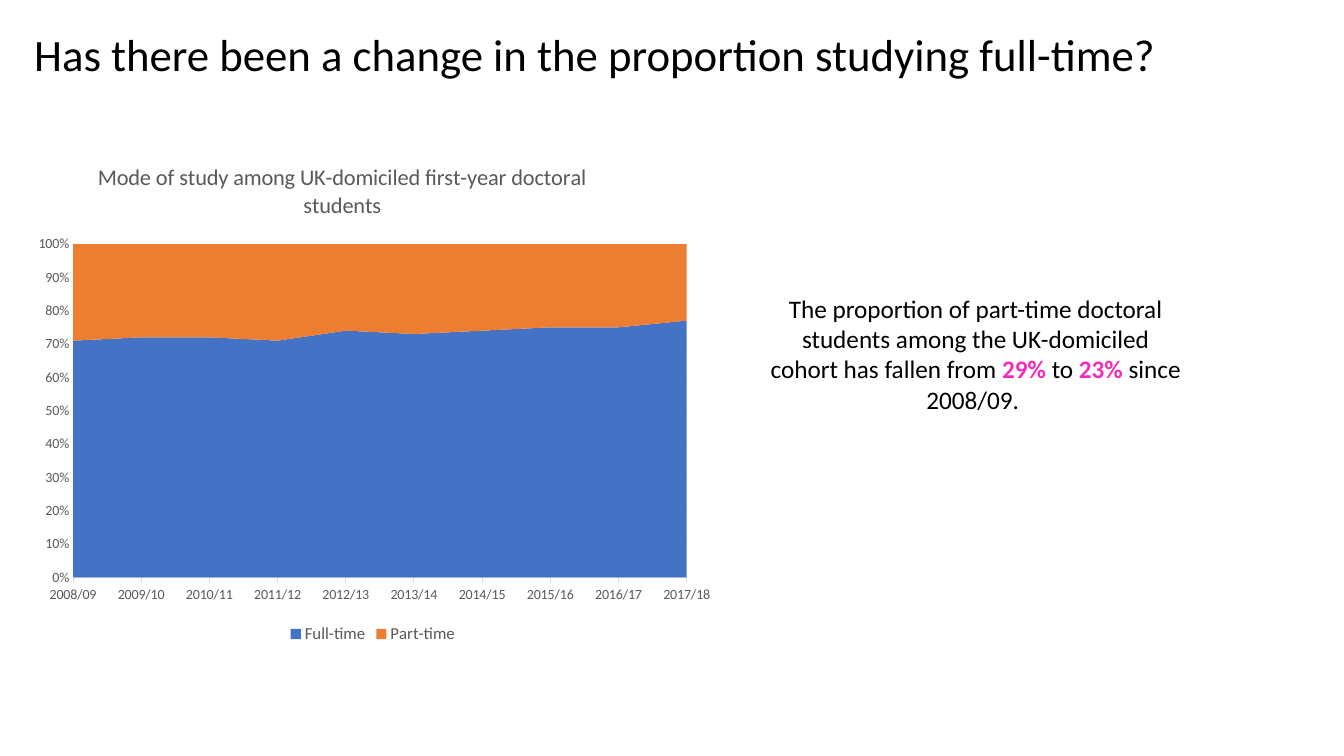
"""Build a slide on the share of UK-domiciled doctoral students studying full-time."""
from lxml import etree
from pptx import Presentation
from pptx.chart.data import CategoryChartData
from pptx.dml.color import RGBColor
from pptx.enum import chart as ch, text
from pptx.oxml.ns import qn
from pptx.util import Pt

FONT = "Calibri"
COLORS = {"text": "000000", "accent": "F22CBE", "label": "595959", "rule": "D9D9D9",
          "Full-time": "4472C4", "Part-time": "ED7D31"}
TITLE = [("Has there been a change in the proportion studying full-time?", "text", False)]
FINDING = [
    ("The proportion of part-time doctoral students among the UK-domiciled cohort has fallen from ",
     "text", False),
    ("29% ", "accent", True),
    ("to ", "text", False),
    ("23% ", "accent", True),
    ("since 2008/09. ", "text", False),
]
CHART_TITLE = "Mode of study among UK-domiciled first-year doctoral students"
FIRST_YEAR = 2008
FULL_TIME = [71, 72, 72, 71, 74, 73, 74, 75, 75, 77]
SERIES = {"Full-time": FULL_TIME, "Part-time": [100 - v for v in FULL_TIME]}
YEARS = [f"{y}/{(y + 1) % 100:02d}" for y in range(FIRST_YEAR, FIRST_YEAR + len(FULL_TIME))]
TITLE_BOX = (17.3, -11.5, 925.2, 104.4)
FINDING_BOX = (541.4, 205.9, 311, 108.7)
CHART_BOX = (17.3, 102.2, 498.2, 360.7)
TITLE_SPOT = {"xMode": "edge", "yMode": "edge", "x": 0.1, "y": 0.03}
PLOT_SPOT = {"layoutTarget": "inner", "xMode": "edge", "yMode": "edge",
             "x": 0.07, "y": 0.2, "w": 0.88, "h": 0.66}


def rgb(name):
    return RGBColor.from_string(COLORS[name])


def style(font, size, color, bold=False):
    font.name, font.size, font.bold = FONT, Pt(size), bold
    font.color.rgb = rgb(color)


def add_text(slide, box, runs, size, align, anchor):
    tf = slide.shapes.add_textbox(*map(Pt, box)).text_frame
    tf.word_wrap = True
    tf.vertical_anchor = anchor
    p = tf.paragraphs[0]
    p.alignment = align
    for words, color, bold in runs:
        r = p.add_run()
        r.text = words
        style(r.font, size, color, bold)
    return p


def place(parent, index, spot):
    for old in parent.findall(qn("c:layout")):
        parent.remove(old)
    layout = etree.Element(qn("c:layout"))
    manual = etree.SubElement(layout, qn("c:manualLayout"))
    for tag, value in spot.items():
        etree.SubElement(manual, qn(f"c:{tag}")).set("val", str(value))
    parent.insert(index, layout)


def rule(line):
    line.color.rgb = rgb("rule")
    line.width = Pt(0.75)


def add_mode_chart(slide):
    data = CategoryChartData(number_format="0")
    data.categories = YEARS
    for name, values in SERIES.items():
        data.add_series(name, values)
    chart = slide.shapes.add_chart(
        ch.XL_CHART_TYPE.AREA_STACKED_100, *map(Pt, CHART_BOX), data).chart
    style(chart.font, 10, "text")
    plot = chart.plots[0]
    plot.vary_by_categories = False
    for series in plot.series:
        series.format.fill.solid()
        series.format.fill.fore_color.rgb = rgb(series.name)

    chart.has_title = True
    title = chart.chart_title
    r = title.text_frame.paragraphs[0].add_run()
    r.text = CHART_TITLE
    style(r.font, 16, "label")
    place(title._element, 1, TITLE_SPOT)
    place(chart._chartSpace.chart.plotArea, 0, PLOT_SPOT)

    chart.has_legend = True
    chart.legend.position = ch.XL_LEGEND_POSITION.BOTTOM
    chart.legend.include_in_layout = False
    style(chart.legend.font, 12, "label")

    years, share = chart.category_axis, chart.value_axis
    for axis in (years, share):
        style(axis.tick_labels.font, 10, "label")
        axis.minor_tick_mark = ch.XL_TICK_MARK.NONE
    years.has_major_gridlines = False
    years.major_tick_mark = ch.XL_TICK_MARK.OUTSIDE
    rule(years.format.line)
    share.major_tick_mark = ch.XL_TICK_MARK.NONE
    share.minimum_scale, share.maximum_scale, share.major_unit = 0, 1, 0.1
    share.tick_labels.number_format = "0%"
    share.tick_labels.number_format_is_linked = False
    share.format.line.fill.background()
    share.has_major_gridlines = True
    rule(share.major_gridlines.format.line)


def main():
    prs = Presentation()
    prs.slide_width, prs.slide_height = Pt(960), Pt(540)
    slide = prs.slides.add_slide(prs.slide_layouts[6])
    heading = add_text(slide, TITLE_BOX, TITLE, 32, text.PP_ALIGN.LEFT, text.MSO_ANCHOR.MIDDLE)
    heading.line_spacing = 0.9
    add_text(slide, FINDING_BOX, FINDING, 18, text.PP_ALIGN.CENTER, text.MSO_ANCHOR.TOP)
    add_mode_chart(slide)
    prs.save("out.pptx")


if __name__ == "__main__":
    main()
